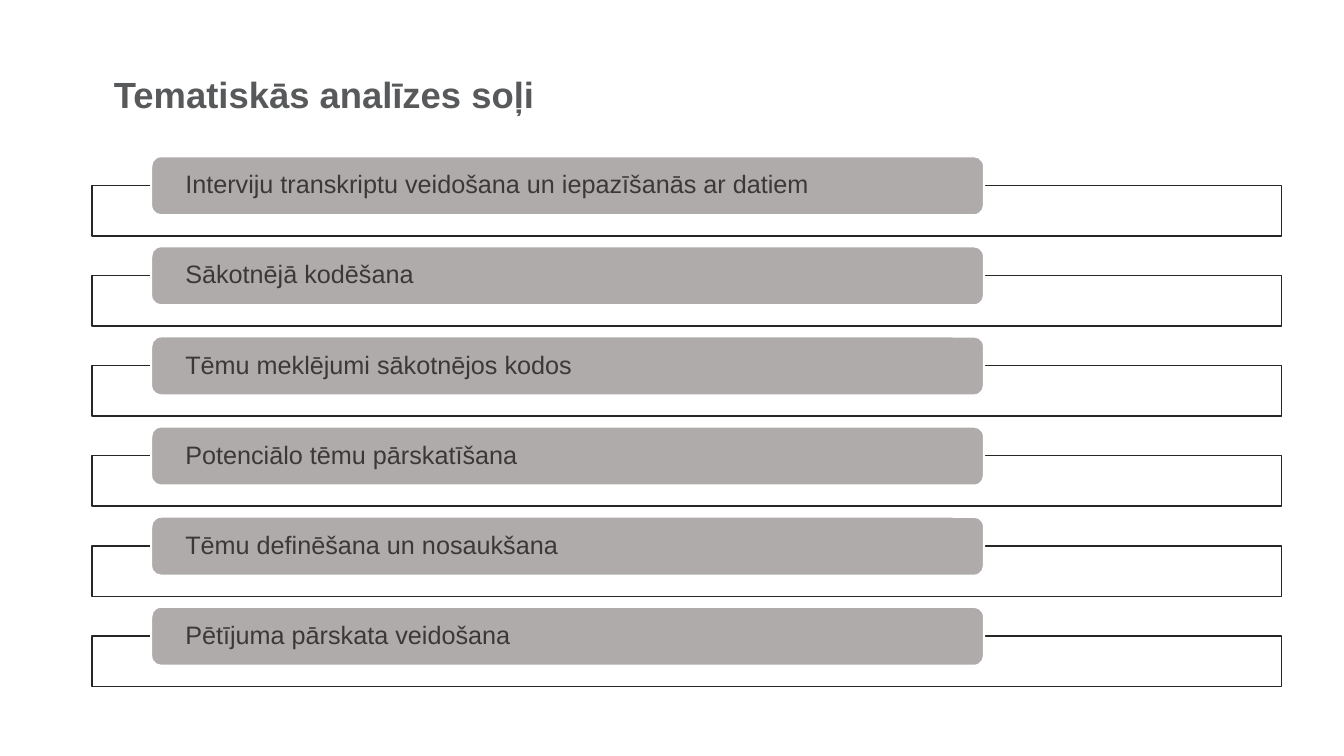
from pptx import Presentation
from pptx.dml.color import RGBColor as RGB
from pptx.enum.shapes import MSO_SHAPE as SHAPE
from pptx.enum.text import MSO_ANCHOR as ANCHOR, PP_ALIGN as ALIGN
from pptx.util import Inches, Pt

COLORS = {
    "title": "58595B",
    "text": "3B3838",
    "bar": "AFABAB",
    "frame": "262626",
    "white": "FFFFFF",
}
FORMATS = {
    "title": {"name": "Arial", "size": Pt(26), "bold": True},
    "text": {"name": "Arial", "size": Pt(18), "bold": False},
}
STEPS = [
    "Interviju transkriptu veidošana un iepazīšanās ar datiem",
    "Sākotnējā kodēšana",
    "Tēmu meklējumi sākotnējos kodos",
    "Potenciālo tēmu pārskatīšana",
    "Tēmu definēšana un nosaukšana",
    "Pētījuma pārskata veidošana",
]
FIRST_ROW, ROW_PITCH = 20.67, 11.92
FRAME_DROP = 3.86


class Deck:
    def __init__(self, width, height):
        self.prs = Presentation()
        self.prs.slide_width = Inches(width)
        self.prs.slide_height = Inches(height)
        self.s = self.prs.slides.add_slide(self.prs.slide_layouts[6])

    def box(self, x, y, w, h):
        across, down = self.prs.slide_width / 100, self.prs.slide_height / 100
        return int(x * across), int(y * down), int(w * across), int(h * down)

    def color(self, key):
        return RGB.from_string(COLORS[key])

    def label(self, sp, text, style, anchor, inset=0):
        tf = sp.text_frame
        settings = {
            "word_wrap": True,
            "vertical_anchor": anchor,
            "margin_left": Inches(inset),
            "margin_right": Inches(inset),
            "margin_top": 0,
            "margin_bottom": 0,
        }
        for key, value in settings.items():
            setattr(tf, key, value)
        p = tf.paragraphs[0]
        p.alignment = ALIGN.LEFT
        p.line_spacing = 0.9
        r = p.add_run()
        r.text = text
        for key, value in FORMATS[style].items():
            setattr(r.font, key, value)
        r.font.color.rgb = self.color(style)

    def title(self, text, *share):
        sp = self.s.shapes.add_textbox(*self.box(*share))
        self.label(sp, text, "title", ANCHOR.TOP)

    def shape(self, kind, fill, line, weight, *share):
        sp = self.s.shapes.add_shape(kind, *self.box(*share))
        sp.shadow.inherit = False
        sp.fill.solid()
        sp.fill.fore_color.rgb = self.color(fill)
        sp.line.color.rgb = self.color(line)
        sp.line.width = Pt(weight)
        return sp

    def step(self, text, y):
        self.shape(SHAPE.RECTANGLE, "white", "frame", 1,
                   6.83, y + FRAME_DROP, 88.52, 6.67)
        sp = self.shape(SHAPE.ROUNDED_RECTANGLE, "bar", "white", 1.5,
                        11.25, y, 61.96, 7.8)
        self.label(sp, text, "text", ANCHOR.MIDDLE, 0.31)


def main():
    deck = Deck(13.33, 7.5)
    deck.title("Tematiskās analīzes soļi", 8.48, 10.13, 86.27, 15.07)
    for i, text in enumerate(STEPS):
        deck.step(text, FIRST_ROW + i * ROW_PITCH)
    deck.prs.save("out.pptx")


if __name__ == "__main__":
    main()
